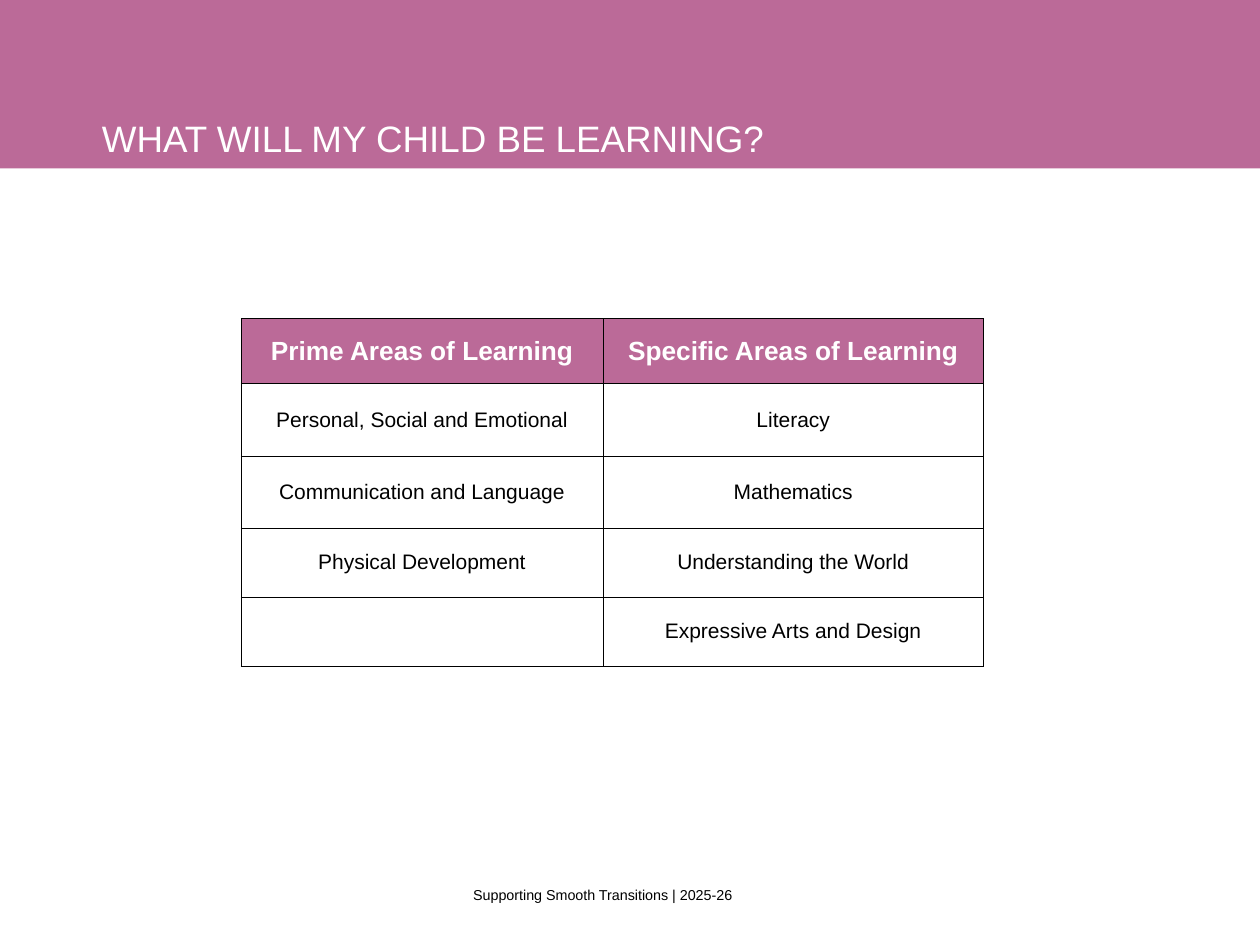
from lxml import etree
from pptx import Presentation
from pptx.dml.color import RGBColor
from pptx.enum.shapes import MSO_SHAPE
from pptx.enum.text import MSO_ANCHOR, PP_ALIGN
from pptx.oxml.ns import qn
from pptx.util import Pt

RECTANGLE = MSO_SHAPE.RECTANGLE
MIDDLE, BOTTOM = MSO_ANCHOR.MIDDLE, MSO_ANCHOR.BOTTOM
LEFT, CENTER = PP_ALIGN.LEFT, PP_ALIGN.CENTER
PINK = RGBColor(0xBB, 0x6A, 0x98)
WHITE = RGBColor(0xFF, 0xFF, 0xFF)
BLACK = RGBColor(0, 0, 0)

COLUMN_WIDTHS = [206.8, 217.4]
ROW_HEIGHTS = [37.2, 41.2, 41.2, 39.5, 39.5]
AREAS = [
    ("Prime Areas of Learning", "Specific Areas of Learning"),
    ("Personal, Social and Emotional", "Literacy"),
    ("Communication and Language", "Mathematics"),
    ("Physical Development", "Understanding the World"),
    ("", "Expressive Arts and Design"),
]


def write_text(paragraph, text, size, color, alignment, bold=False):
    paragraph.text = text
    paragraph.alignment = alignment
    font = paragraph.font
    font.name, font.size, font.bold = "Arial", Pt(size), bold
    font.color.rgb = color


def add_band(slide, width, height):
    band = slide.shapes.add_shape(RECTANGLE, 0, 0, width, height)
    band.shadow.inherit = False
    band.fill.solid()
    band.fill.fore_color.rgb = PINK
    band.line.fill.background()


def add_text(slide, box, text, size, color, alignment, anchor):
    shape = slide.shapes.add_textbox(*(Pt(length) for length in box))
    frame = shape.text_frame
    frame.word_wrap = True
    frame.vertical_anchor = anchor
    write_text(frame.paragraphs[0], text, size, color, alignment)


def add_borders(cell):
    properties = cell._tc.get_or_add_tcPr()
    for side in ("a:lnL", "a:lnR", "a:lnT", "a:lnB"):
        line = etree.SubElement(properties, qn(side), w=str(Pt(0.25)))
        fill = etree.SubElement(line, qn("a:solidFill"))
        etree.SubElement(fill, qn("a:srgbClr"), val=str(BLACK))


def fill_cell(cell, text, is_header):
    cell.margin_left = cell.margin_right = Pt(5)
    cell.margin_top = cell.margin_bottom = Pt(3)
    cell.vertical_anchor = MIDDLE
    add_borders(cell)
    if is_header:
        cell.fill.solid()
        cell.fill.fore_color.rgb = PINK
    else:
        cell.fill.background()
    size, color = (15, WHITE) if is_header else (12, BLACK)
    write_text(cell.text_frame.paragraphs[0], text, size, color, CENTER, is_header)


def add_areas_table(slide, left, top):
    table = slide.shapes.add_table(
        len(AREAS), len(COLUMN_WIDTHS), Pt(left), Pt(top),
        Pt(sum(COLUMN_WIDTHS)), Pt(sum(ROW_HEIGHTS))).table
    table.first_row = table.horz_banding = False
    for column, width in zip(table.columns, COLUMN_WIDTHS):
        column.width = Pt(width)
    for index, (row, height, texts) in enumerate(zip(table.rows, ROW_HEIGHTS, AREAS)):
        row.height = Pt(height)
        for cell, text in zip(row.cells, texts):
            fill_cell(cell, text, index == 0)


def main():
    presentation = Presentation()
    presentation.slide_width, presentation.slide_height = Pt(720), Pt(540)
    slide = presentation.slides.add_slide(presentation.slide_layouts[6])
    add_band(slide, presentation.slide_width, Pt(96.2))
    add_text(slide, (230.4, 504, 228.2, 14.4),
             "Supporting Smooth Transitions | 2025-26", 8.2, BLACK, CENTER, MIDDLE)
    add_text(slide, (51.2, 5, 540.7, 90),
             "WHAT WILL MY CHILD BE LEARNING?", 21, WHITE, LEFT, BOTTOM)
    add_areas_table(slide, 137.8, 182)
    presentation.save("out.pptx")


if __name__ == "__main__":
    main()
